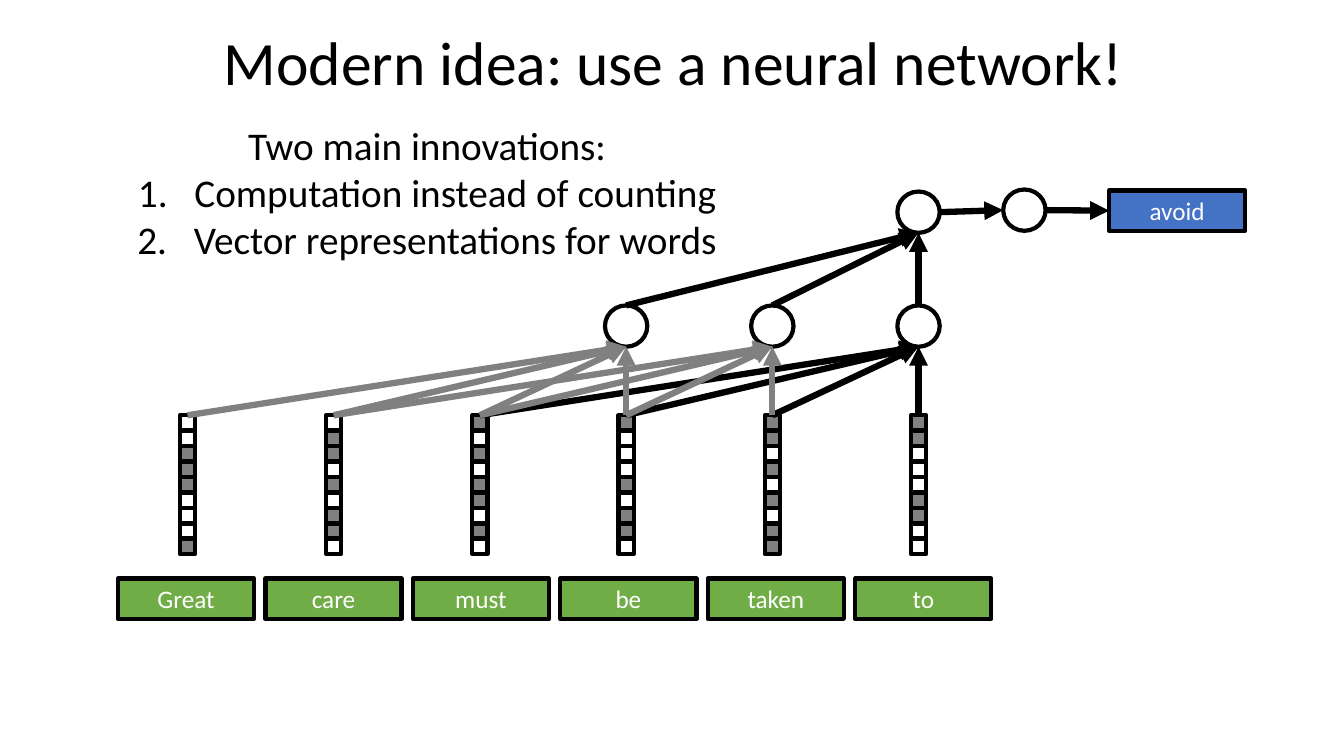
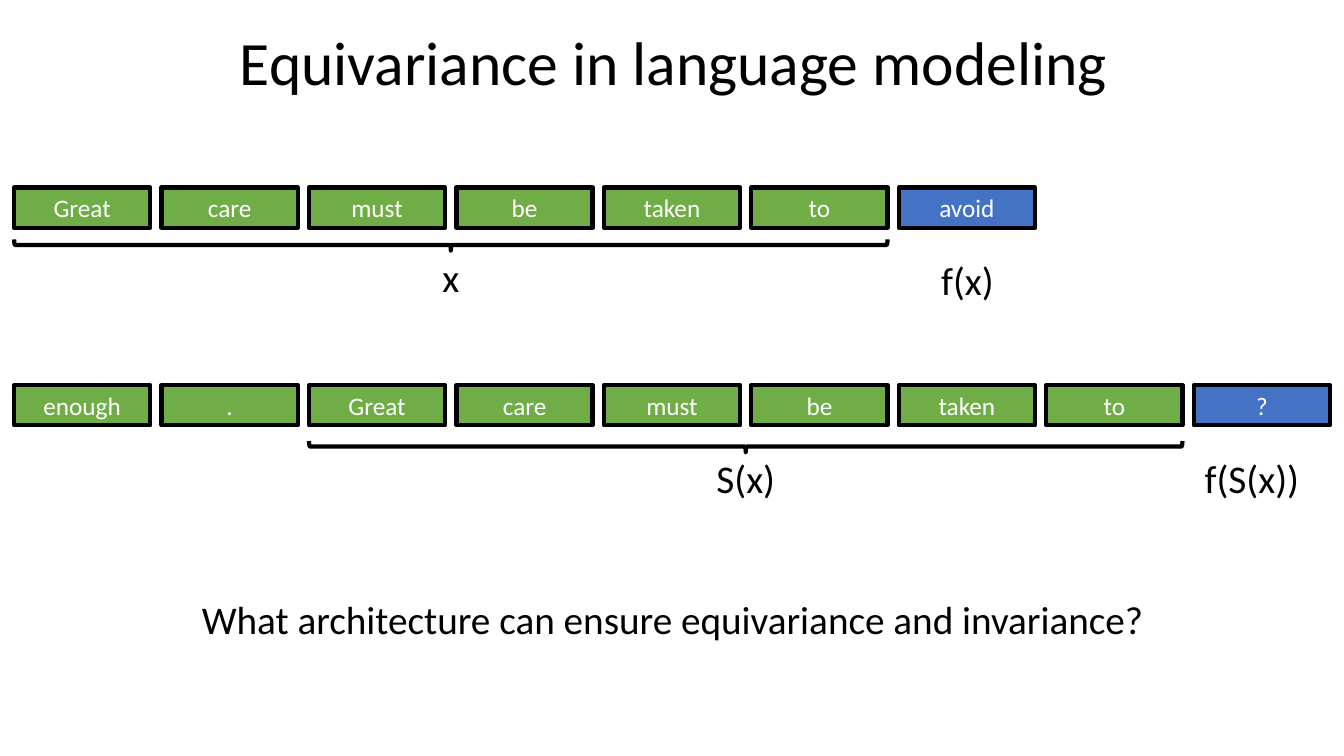
from lxml.etree import SubElement
from pptx import Presentation
from pptx.dml.color import RGBColor
from pptx.enum.shapes import MSO_CONNECTOR, MSO_SHAPE
from pptx.enum.text import MSO_ANCHOR, PP_ALIGN
from pptx.oxml.ns import qn
from pptx.util import Inches, Pt

COLORS = {"black": "000000", "white": "FFFFFF", "gray": "808080",
          "green": "70AD47", "blue": "4472C4"}
FONT = "Calibri"

VECTORS = [("Great", "001110001"), ("care", "011010110"), ("must", "101011010"),
           ("be", "100010110"), ("taken", "110101011"), ("to", "110001100")]
SENTENCE = [word for word, bits in VECTORS]
INNOVATIONS = ["Computation instead of counting", "Vector representations for words"]

WORD_WIDTH, WORD_HEIGHT = 1.35, 0.4
WORD_PITCH = 11.7 / 8
CELL, CELL_PITCH, VECTOR_TOP = 0.15, 1.38 / 9, 4.12
COLUMNS = [1.86 + 1.45 * index for index in range(len(VECTORS))]
NODE_WIDTH, NODE_HEIGHT = 0.42, 0.41
HIDDEN_TOP, MERGE_TOP, OUTPUT_TOP, OUTPUT_X = 3.03, 1.9, 1.88, 10.16
WINDOW = 4

SEQUENCES = [
    {"top": 1.86, "words": SENTENCE, "skip": 0, "next": "avoid", "brace": 2.43,
     "input": ("x", 2.46, 0.37), "output": ("f(x)", 9.23, 2.49, 0.73)},
    {"top": 3.82, "words": ["enough", "."] + SENTENCE, "skip": 2, "next": "?", "brace": 4.43,
     "input": ("S(x)", 4.46, 0.79), "output": ("f(S(x))", 11.84, 4.46, 1.15)},
]


def color(name):
    return RGBColor.from_string(COLORS[name])


def add_span(para, text, size, name):
    para.alignment = PP_ALIGN.CENTER
    span = para.add_run()
    span.text = text
    span.font.name, span.font.size = FONT, Pt(size)
    span.font.color.rgb = color(name)


def add_outlined(page, kind, left, top, width, height, fill=None):
    shape = page.shapes.add_shape(kind, Inches(left), Inches(top), Inches(width), Inches(height))
    shape.shadow.inherit = False
    if fill:
        shape.fill.solid()
        shape.fill.fore_color.rgb = color(fill)
    else:
        shape.fill.background()
    shape.line.color.rgb = color("black")
    shape.line.width = Pt(3)
    return shape


def add_word(page, text, left, top, fill):
    box = add_outlined(page, MSO_SHAPE.RECTANGLE, left, top, WORD_WIDTH, WORD_HEIGHT, fill)
    box.text_frame.vertical_anchor = MSO_ANCHOR.MIDDLE
    add_span(box.text_frame.paragraphs[0], text, 18, "white")


def add_words(page, words, left, top):
    for index, word in enumerate(words):
        add_word(page, word, left + index * WORD_PITCH, top, "green")


def add_label(page, text, left, top, width, height=0.57, size=28, wrap=False):
    box = page.shapes.add_textbox(Inches(left), Inches(top), Inches(width), Inches(height))
    box.text_frame.word_wrap = wrap
    add_span(box.text_frame.paragraphs[0], text, size, "black")
    return box.text_frame


def add_page(deck, title):
    page = deck.slides.add_slide(deck.slide_layouts[6])
    frame = add_label(page, title, 0.02, 0.02, 13.33, 1.27, 44, True)
    frame.vertical_anchor = MSO_ANCHOR.MIDDLE
    frame.paragraphs[0].line_spacing = 0.9
    return page


def add_arrow(page, start, end, name="black"):
    arrow = page.shapes.add_connector(
        MSO_CONNECTOR.STRAIGHT, *(Inches(value) for value in start + end))
    arrow.line.color.rgb = color(name)
    arrow.line.width = Pt(4.5)
    SubElement(arrow.line._get_or_add_ln(), qn("a:tailEnd"), type="triangle")
    SubElement(arrow._element.spPr, qn("a:effectLst"))


def add_node(page, center, top):
    add_outlined(page, MSO_SHAPE.OVAL, center - NODE_WIDTH / 2, top, NODE_WIDTH, NODE_HEIGHT)


def build_network(deck):
    page = add_page(deck, "Modern idea: use a neural network!")
    add_words(page, SENTENCE, 1.17, 5.74)
    add_word(page, "avoid", 11, 1.89, "blue")
    for center, (word, bits) in zip(COLUMNS, VECTORS):
        for row, bit in enumerate(bits):
            add_outlined(page, MSO_SHAPE.RECTANGLE, center - CELL / 2,
                         VECTOR_TOP + row * CELL_PITCH, CELL, CELL,
                         "gray" if bit == "1" else "white")

    last = COLUMNS[-1]
    for node in reversed(range(WINDOW - 1, len(COLUMNS))):
        center = COLUMNS[node]
        add_node(page, center, HIDDEN_TOP)
        for source in COLUMNS[node - WINDOW + 1:node + 1]:
            add_arrow(page, (source, VECTOR_TOP), (center, HIDDEN_TOP + NODE_HEIGHT),
                      "black" if center == last else "gray")
        add_arrow(page, (center, HIDDEN_TOP), (last, MERGE_TOP + NODE_HEIGHT))

    add_node(page, last, MERGE_TOP)
    add_node(page, OUTPUT_X, OUTPUT_TOP)
    output_middle = OUTPUT_TOP + NODE_HEIGHT / 2
    add_arrow(page, (last + NODE_WIDTH / 2, MERGE_TOP + NODE_HEIGHT / 2),
              (OUTPUT_X - NODE_WIDTH / 2, output_middle))
    add_arrow(page, (OUTPUT_X + NODE_WIDTH / 2, output_middle), (11, 1.89 + WORD_HEIGHT / 2))

    frame = add_label(page, "Two main innovations:", 1.23, 1.15, 6.01, 1.51)
    for item in INNOVATIONS:
        para = frame.add_paragraph()
        add_span(para, item, 28, "black")
        properties = para._p.get_or_add_pPr()
        properties.set("marL", str(Inches(0.56)))
        properties.set("indent", str(-Inches(0.56)))
        SubElement(properties, qn("a:buAutoNum"), type="arabicPeriod")


def build_equivariance(deck):
    page = add_page(deck, "Equivariance in language modeling")
    left = 0.14
    length = (len(SENTENCE) - 1) * WORD_PITCH + WORD_WIDTH
    thickness = 0.11
    for sequence in SEQUENCES:
        words, top = sequence["words"], sequence["top"]
        add_words(page, words, left, top)
        add_word(page, sequence["next"], left + len(words) * WORD_PITCH, top, "blue")
        middle = left + sequence["skip"] * WORD_PITCH + length / 2
        brace = add_outlined(page, MSO_SHAPE.LEFT_BRACE, middle - thickness / 2,
                             sequence["brace"] - length / 2, thickness, length)
        brace.rotation = 270
        text, label_top, width = sequence["input"]
        add_label(page, text, middle - width / 2, label_top, width)
        add_label(page, *sequence["output"])
    add_label(page, "What architecture can ensure equivariance and invariance?", 1.85, 5.86, 9.64)


def main():
    deck = Presentation()
    deck.slide_width, deck.slide_height = Inches(13.33), Inches(7.5)
    build_network(deck)
    build_equivariance(deck)
    deck.save("out.pptx")


if __name__ == "__main__":
    main()
